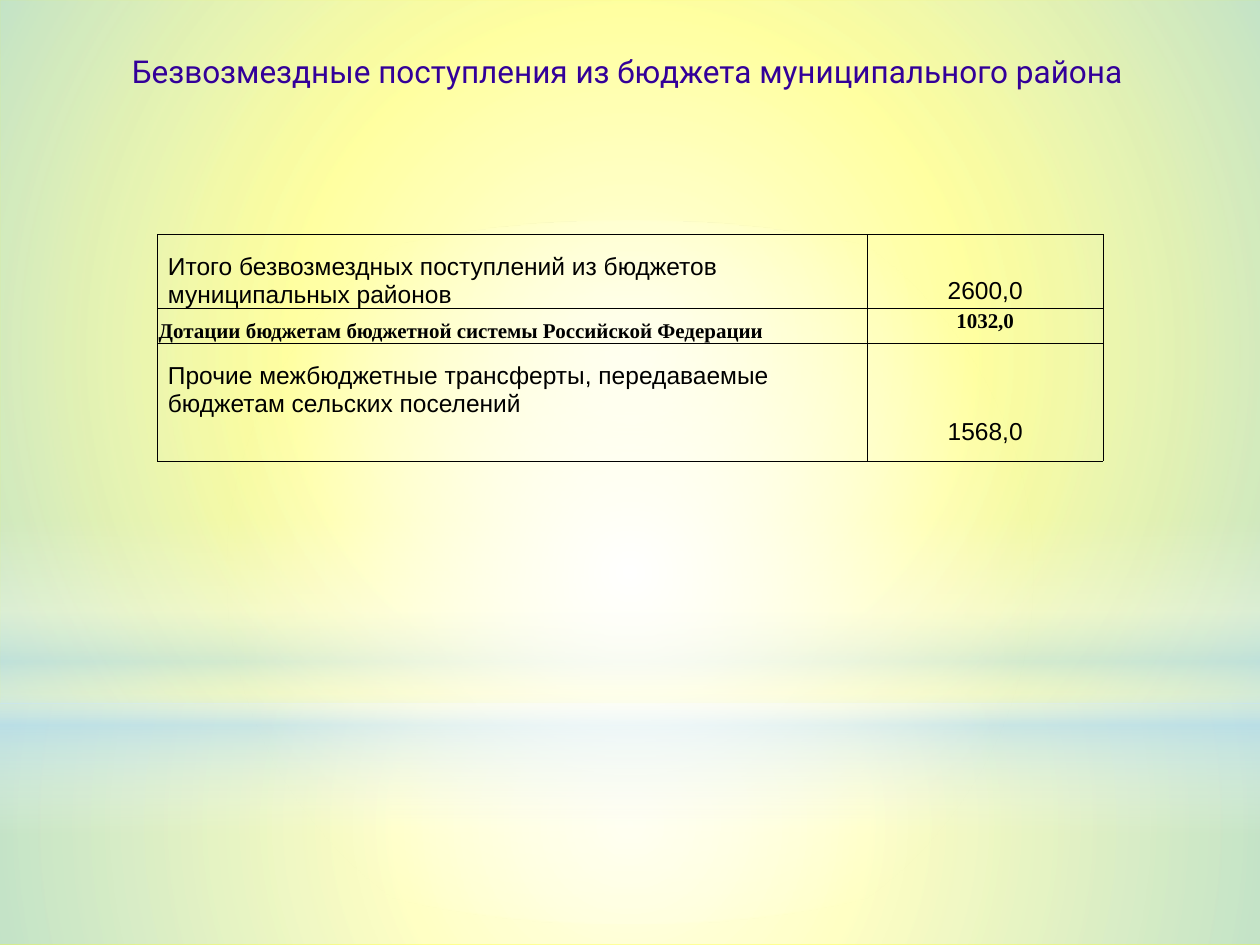
from pptx import Presentation
from pptx.dml.color import RGBColor
from pptx.enum.shapes import MSO_SHAPE as Shape
from pptx.enum.text import MSO_ANCHOR as Anchor, PP_ALIGN as Align
from pptx.oxml import parse_xml
from pptx.oxml.ns import nsdecls, qn
from pptx.util import Pt

WHITE, SKY = "FFFFFF", "B4DCFA"
RADIAL = ('<a:path path="circle"><a:fillToRect l="50000" t="50000" '
          'r="50000" b="50000"/></a:path>')
LINEAR = '<a:lin ang="5400000" scaled="0"/>'

GLOWS = [
    (Shape.RECTANGLE, (0, 402, 720, 138), RADIAL,
     [(0, WHITE, 91), (37, WHITE, 76), (100, SKY, 79)]),
    (Shape.RECTANGLE, (0, 0, 720, 402), RADIAL,
     [(0, WHITE, 89), (48, WHITE, 62), (100, SKY, 79)]),
    (Shape.RECTANGLE, (0, 297, 720, 180), LINEAR,
     [(0, WHITE, 0), (29, WHITE, 30), (45, SKY, 40),
      (55, WHITE, 26), (65, SKY, 60), (100, WHITE, 0)]),
    (Shape.OVAL, (0, 126, 720, 402), RADIAL,
     [(0, WHITE, 100), (56, WHITE, 0)]),
]

COLS = [405.5, 135]
ROWS = [
    (42.3, "Arial", 14, False, (6, 8),
     ("Итого безвозмездных поступлений из бюджетов муниципальных районов",
      Anchor.BOTTOM, 0),
     ("2600,0", Anchor.BOTTOM, 2)),
    (20, "Times New Roman", 12, True, (0.7, 0.7),
     ("Дотации бюджетам бюджетной системы Российской Федерации",
      Anchor.BOTTOM, 0),
     ("1032,0", Anchor.TOP, 0)),
    (67.3, "Arial", 14, False, (6, 11),
     ("Прочие межбюджетные трансферты, передаваемые бюджетам сельских поселений",
      Anchor.TOP, 0),
     ("1568,0", Anchor.BOTTOM, 8.6)),
]


def rgb(code):
    return RGBColor.from_string(code)


def style(para, face, size, color, bold=False, align=Align.LEFT):
    para.alignment = align
    font = para.font
    font.name, font.size, font.bold = face, Pt(size), bold
    font.color.rgb = rgb(color)


def add_glow(slide, kind, box, path, stops):
    glow = slide.shapes.add_shape(kind, *map(Pt, box))
    glow.shadow.inherit = False
    glow.line.fill.background()
    glow.fill.background()
    marks = "".join(
        f'<a:gs pos="{pos * 1000}"><a:srgbClr val="{rgb(code)}">'
        f'<a:alpha val="{alpha * 1000}"/></a:srgbClr></a:gs>'
        for pos, code, alpha in stops)
    grad = parse_xml(f'<a:gradFill {nsdecls("a")} rotWithShape="1">'
                     f'<a:gsLst>{marks}</a:gsLst>{path}</a:gradFill>')
    props = glow._element.spPr
    props.replace(props.find(qn("a:noFill")), grad)


def add_title(slide, box):
    frame = slide.shapes.add_textbox(*map(Pt, box)).text_frame
    frame.word_wrap = True
    para = frame.paragraphs[0]
    para.text = "Безвозмездные поступления из бюджета муниципального района"
    style(para, "Roboto", 18, "330099", align=Align.CENTER)


def add_edges(cell, color, width):
    props = cell._tc.get_or_add_tcPr()
    for spot, side in enumerate("LRTB"):
        props.insert(spot, parse_xml(
            f'<a:ln{side} {nsdecls("a")} w="{Pt(width)}"><a:solidFill>'
            f'<a:srgbClr val="{rgb(color)}"/></a:solidFill></a:ln{side}>'))


def add_grid(slide, box):
    table = slide.shapes.add_table(len(ROWS), len(COLS), *map(Pt, box)).table
    table.first_row = table.horz_banding = False
    for col, width in zip(table.columns, COLS):
        col.width = Pt(width)
    for row, (height, face, size, bold, inset, *items) in zip(table.rows, ROWS):
        row.height = Pt(height)
        side, top = inset
        aligns = (Align.LEFT, Align.CENTER)
        for cell, (text, anchor, base), align in zip(row.cells, items, aligns):
            cell.margin_left = cell.margin_right = Pt(side)
            cell.margin_top, cell.margin_bottom = Pt(top), Pt(base)
            cell.vertical_anchor = anchor
            cell.fill.background()
            add_edges(cell, "000000", 0.06)
            para = cell.text_frame.paragraphs[0]
            para.text = text
            style(para, face, size, "000000", bold, align)


def main():
    deck = Presentation()
    deck.slide_width, deck.slide_height = Pt(720), Pt(540)
    slide = deck.slides.add_slide(deck.slide_layouts[6])
    back = slide.background.fill
    back.solid()
    back.fore_color.rgb = rgb("FFFF00")
    for glow in GLOWS:
        add_glow(slide, *glow)
    add_title(slide, (-3, 26, 723, 29.5))
    add_grid(slide, (90, 134, sum(COLS), sum(row[0] for row in ROWS)))
    deck.save("out.pptx")


if __name__ == "__main__":
    main()
